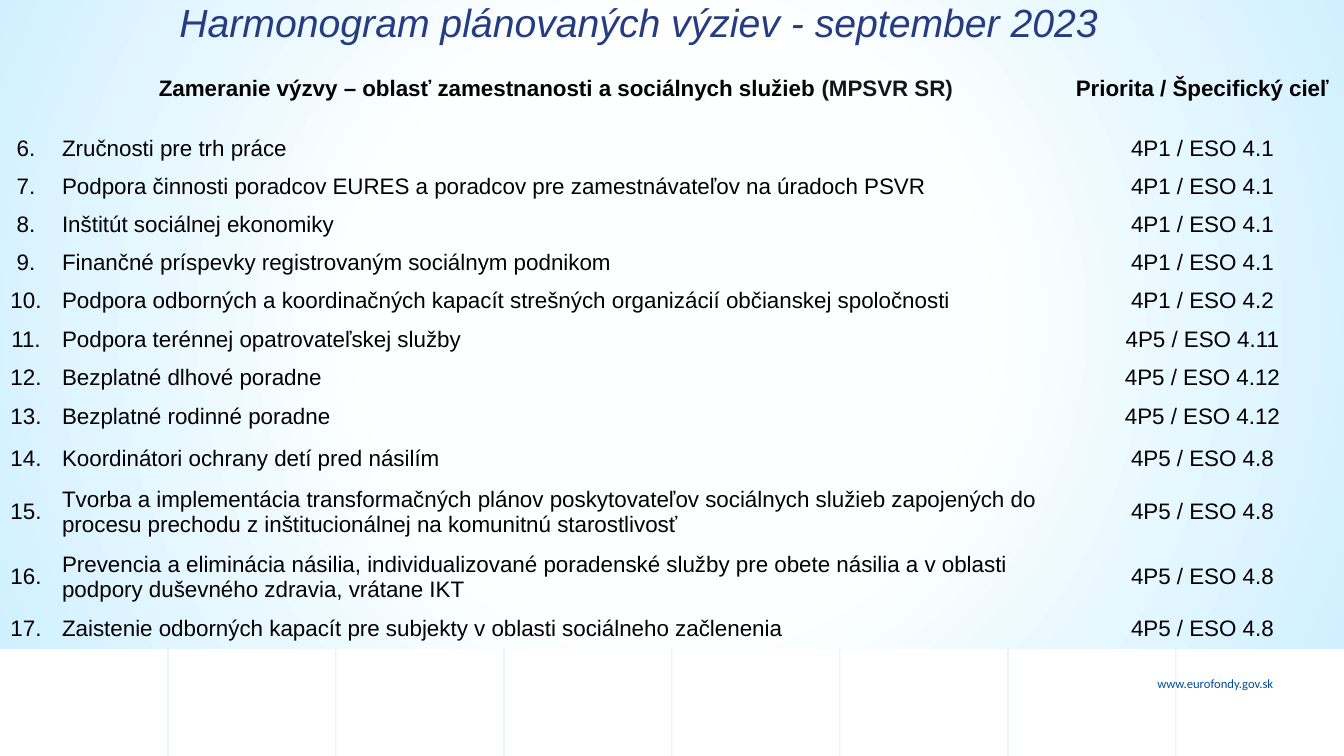
import dataclasses
import typing

import lxml.etree
import pptx
import pptx.dml.color
import pptx.enum.shapes
import pptx.enum.text
import pptx.oxml
import pptx.oxml.ns
import pptx.util

PIXELS_PER_INCH = 100.8
WIDTH, HEIGHT = 1344, 756
BLACK, NAVY, BLUE, WHITE = "000000", "263C80", "004C96", "FFFFFF"
GRID_COLUMNS = 8
GRID_STEP = WIDTH // GRID_COLUMNS
TABLE_TOP = 48
COLUMN_WIDTHS = (52, 1008, 285)
HEADER_HEIGHT = 82
PLAIN_STYLE = "{2D5ABB26-0587-4C30-8999-92F81FD0307C}"
LEFT = pptx.enum.text.PP_ALIGN.LEFT
CENTER = pptx.enum.text.PP_ALIGN.CENTER
RIGHT = pptx.enum.text.PP_ALIGN.RIGHT


@dataclasses.dataclass(frozen=True)
class Span:
    text: str
    size: int = 16
    color: str = BLACK
    bold: bool = False
    italic: bool = False
    font: str = "Arial"


@dataclasses.dataclass(frozen=True)
class Call:
    focus: str
    goal: str
    height: int = 38


FIRST_NUMBER = 6
CALLS = (
    Call("Zručnosti pre trh práce", "4P1 / ESO 4.1"),
    Call("Podpora činnosti poradcov EURES a poradcov pre zamestnávateľov na úradoch PSVR", "4P1 / ESO 4.1"),
    Call("Inštitút sociálnej ekonomiky", "4P1 / ESO 4.1"),
    Call("Finančné príspevky registrovaným sociálnym podnikom", "4P1 / ESO 4.1"),
    Call("Podpora odborných a koordinačných kapacít strešných organizácií občianskej spoločnosti", "4P1 / ESO 4.2"),
    Call("Podpora terénnej opatrovateľskej služby", "4P5 / ESO 4.11", 39),
    Call("Bezplatné dlhové poradne", "4P5 / ESO 4.12"),
    Call("Bezplatné rodinné poradne", "4P5 / ESO 4.12", 40),
    Call("Koordinátori ochrany detí pred násilím", "4P5 / ESO 4.8", 43),
    Call("Tvorba a implementácia transformačných plánov poskytovateľov sociálnych služieb zapojených do "
         "procesu prechodu z inštitucionálnej na komunitnú starostlivosť", "4P5 / ESO 4.8", 65),
    Call("Prevencia a eliminácia násilia, individualizované poradenské služby pre obete násilia a v oblasti "
         "podpory duševného zdravia, vrátane IKT", "4P5 / ESO 4.8", 65),
    Call("Zaistenie odborných kapacít pre subjekty v oblasti sociálneho začlenenia", "4P5 / ESO 4.8"),
)


def px(length: int) -> pptx.util.Emu:
    return pptx.util.Emu(round(length * 914400 / PIXELS_PER_INCH))


def paint(color_format: typing.Any, color: str) -> None:
    color_format.rgb = pptx.dml.color.RGBColor.from_string(color)


def set_opacity(element: typing.Any, percent: int) -> None:
    for color in element.iter(pptx.oxml.ns.qn("a:srgbClr")):
        alpha = lxml.etree.SubElement(color, pptx.oxml.ns.qn("a:alpha"))
        alpha.set("val", str(percent * 1000))


def write(frame: typing.Any, spans: typing.Sequence[Span], align: typing.Any) -> None:
    para = frame.paragraphs[0]
    para.text = spans[0].text
    para.alignment = align
    for extra in spans[1:]:
        para.add_run().text = extra.text
    for run, span in zip(para.runs, spans):
        run.font.name = span.font
        run.font.size = pptx.util.Pt(span.size)
        run.font.bold = span.bold
        run.font.italic = span.italic
        paint(run.font.color, span.color)


def add_rectangle(page: typing.Any, left: int, top: int, width: int, height: int) -> typing.Any:
    box = page.shapes.add_shape(pptx.enum.shapes.MSO_SHAPE.RECTANGLE, px(left), px(top), px(width), px(height))
    box.shadow.inherit = False
    box.line.fill.background()
    box.fill.solid()
    paint(box.fill.fore_color, WHITE)
    return box


def add_grid(page: typing.Any) -> None:
    for index in range(1, GRID_COLUMNS):
        left = px(index * GRID_STEP)
        line = page.shapes.add_connector(pptx.enum.shapes.MSO_CONNECTOR.STRAIGHT, left, 0, left, px(HEIGHT))
        line.line.width = pptx.util.Pt(0.75)
        paint(line.line.color, BLUE)
        properties = line._element.spPr
        set_opacity(properties, 10)
        lxml.etree.SubElement(properties, pptx.oxml.ns.qn("a:effectLst"))
    for index in range(GRID_COLUMNS):
        band = add_rectangle(page, index * GRID_STEP, -1, GRID_STEP, HEIGHT + 1)
        set_opacity(band._element.spPr, 4)


def add_glow(page: typing.Any) -> None:
    panel = add_rectangle(page, -2, -4, 1346, 653)
    stops = "".join(
        f'<a:gs pos="{position * 1000}"><a:srgbClr val="{color}"/></a:gs>'
        for position, color in ((0, "FEFFFF"), (40, "FEFFFF"), (100, "D0F0FF"))
    )
    gradient = pptx.oxml.parse_xml(
        f'<a:gradFill {pptx.oxml.ns.nsdecls("a")} rotWithShape="1"><a:gsLst>{stops}</a:gsLst>'
        '<a:path path="circle"><a:fillToRect l="50000" t="50000" r="50000" b="50000"/></a:path></a:gradFill>'
    )
    properties = panel._element.spPr
    properties.replace(properties.find(pptx.oxml.ns.qn("a:solidFill")), gradient)


def add_address(page: typing.Any) -> None:
    box = page.shapes.add_textbox(px(1082), px(671), px(201), px(25))
    box.text_frame.word_wrap = True
    write(box.text_frame, [Span("www.eurofondy.gov.sk", 9, BLUE, font="Calibri")], RIGHT)


def place_title(page: typing.Any) -> None:
    title = page.shapes.title
    title.left, title.top, title.width, title.height = px(18), px(-7), px(1241), px(58)
    frame = title.text_frame
    frame.word_wrap = True
    frame.auto_size = pptx.enum.text.MSO_AUTO_SIZE.NONE
    frame.vertical_anchor = pptx.enum.text.MSO_ANCHOR.MIDDLE
    write(frame, [Span("Harmonogram plánovaných výziev - september 2023", 28, NAVY, italic=True)], CENTER)
    page.shapes._spTree.append(title._element)


def add_schedule(page: typing.Any) -> None:
    heights = [HEADER_HEIGHT] + [call.height for call in CALLS]
    holder = page.shapes.add_table(
        len(heights), len(COLUMN_WIDTHS), 0, px(TABLE_TOP), px(sum(COLUMN_WIDTHS)), px(sum(heights))
    )
    table = holder.table
    table.first_row = False
    table.horz_banding = False
    table._tbl.tblPr.find(pptx.oxml.ns.qn("a:tableStyleId")).text = PLAIN_STYLE
    for column, width in zip(table.columns, COLUMN_WIDTHS):
        column.width = px(width)
    header = [
        [Span("")],
        [Span("Zameranie výzvy – oblasť zamestnanosti a sociálnych služieb ", bold=True),
         Span("(MPSVR SR)", color="141516", bold=True)],
        [Span("Priorita / Špecifický cieľ", bold=True)],
    ]
    body = [
        [[Span(f"{number}.")], [Span(call.focus)], [Span(call.goal)]]
        for number, call in enumerate(CALLS, FIRST_NUMBER)
    ]
    for row_index, (row, height, contents) in enumerate(zip(table.rows, heights, [header] + body)):
        row.height = px(height)
        for column_index, (cell, spans) in enumerate(zip(row.cells, contents)):
            cell.fill.background()
            cell.vertical_anchor = pptx.enum.text.MSO_ANCHOR.MIDDLE
            if column_index == 0:
                cell.margin_left = cell.margin_right = px(5)
            align = LEFT if row_index and column_index == 1 else CENTER
            write(cell.text_frame, spans, align)


def main() -> None:
    deck = pptx.Presentation()
    deck.slide_width, deck.slide_height = px(WIDTH), px(HEIGHT)
    page = deck.slides.add_slide(deck.slide_layouts.get_by_name("Title Only"))
    page.background.fill.solid()
    paint(page.background.fill.fore_color, WHITE)
    add_grid(page)
    add_address(page)
    add_glow(page)
    place_title(page)
    add_schedule(page)
    deck.save("out.pptx")


if __name__ == "__main__":
    main()
